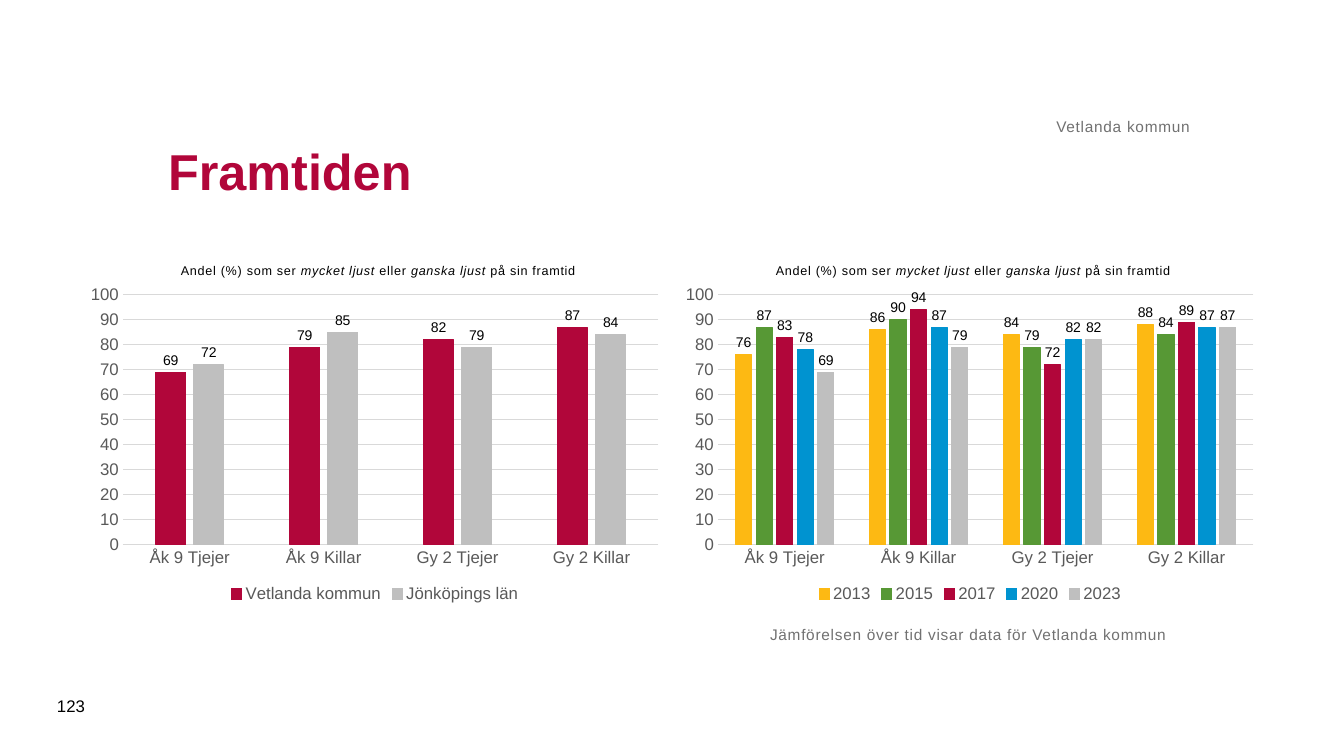
from lxml import etree
from pptx import Presentation
from pptx.chart.data import CategoryChartData
from pptx.dml.color import RGBColor
from pptx.enum.chart import XL_CHART_TYPE as ChartType
from pptx.enum.chart import XL_LABEL_POSITION as LabelPosition
from pptx.enum.chart import XL_LEGEND_POSITION as LegendPosition
from pptx.enum.chart import XL_TICK_MARK as TickMark
from pptx.enum.text import MSO_ANCHOR as Anchor
from pptx.enum.text import PP_ALIGN as Align
from pptx.oxml.ns import qn
from pptx.util import Emu, Pt

FONT = "Arial"
FORMAT = "#,##0;#,##0"
RED = RGBColor(0xB1, 0x06, 0x3A)
SILVER = RGBColor(0xBF, 0xBF, 0xBF)
YELLOW = RGBColor(0xFD, 0xB9, 0x13)
GREEN = RGBColor(0x57, 0x98, 0x35)
BLUE = RGBColor(0x00, 0x93, 0xD0)
BLACK = RGBColor(0, 0, 0)
GREY = RGBColor(0x71, 0x71, 0x71)
AXIS_GREY = RGBColor(0x59, 0x59, 0x59)
GRID_GREY = RGBColor(0xD9, 0xD9, 0xD9)

# Content
TITLE = "Framtiden"
CHART_TITLE = [  # text, italic
    ("Andel (%) som ser ", False),
    ("mycket ljust", True),
    (" eller ", False),
    ("ganska ljust", True),
    (" på sin framtid", False),
]
GROUPS = ["Åk 9 Tjejer", "Åk 9 Killar", "Gy 2 Tjejer", "Gy 2 Killar"]
COUNTY_SERIES = [
    ("Vetlanda kommun", (69, 79, 82, 87), RED),
    ("Jönköpings län", (72, 85, 79, 84), SILVER),
]
YEAR_SERIES = [
    ("2013", (76, 86, 84, 88), YELLOW),
    ("2015", (87, 90, 79, 84), GREEN),
    ("2017", (83, 94, 72, 89), RED),
    ("2020", (78, 87, 82, 87), BLUE),
    ("2023", (69, 79, 82, 87), SILVER),
]
CHARTS = [(79, COUNTY_SERIES), (674, YEAR_SERIES)]  # left edge, series
CHART_TOP, CHART_WIDTH, CHART_HEIGHT = 242, 592, 365
PLOT_BOX = (44, 53, 536, 250)  # inside the chart
CHART_TITLE_AT = (99, 17)
TEXTS = [  # text, box, size, colour, spacing, alignment, anchor, inset
    ("Jämförelsen över tid visar data för Vetlanda kommun",
     (770, 625, 535, 95), 11, GREY, 50, Align.LEFT, Anchor.TOP, 0),
    ("Vetlanda kommun",
     (158, 63, 1032, 73), 11, GREY, 50, Align.RIGHT, Anchor.BOTTOM, 0),
    ("123", (47, 686, 57, 40), 12, BLACK, 0, Align.LEFT, Anchor.MIDDLE, 10),
]


def px(length):
    return Emu(round(length * 914400 / 100.8))


def style_font(font, size, color, bold=False):
    font.name, font.size, font.bold = FONT, Pt(size), bold
    font.color.rgb = color


def add_span(para, text, size, color, bold=False, spacing=0):
    span = para.add_run()
    span.text = text
    style_font(span.font, size, color, bold)
    if spacing:
        span._r.get_or_add_rPr().set("spc", str(spacing))
    return span


def place_part(part, index, settings):
    """Give a chart part a manual layout, as shares of the chart size."""
    layout = part.find(qn("c:layout"))
    if layout is None:
        layout = etree.Element(qn("c:layout"))
        part.insert(index, layout)
    manual = etree.SubElement(layout, qn("c:manualLayout"))
    for tag, value in settings:
        etree.SubElement(manual, qn("c:" + tag)).set("val", str(value))


def shares(lengths):
    sizes = (CHART_WIDTH, CHART_HEIGHT) * 2
    return [(tag, round(length / size, 3))
            for tag, length, size in zip("xywh", lengths, sizes)]


def add_columns(page, left, series_list):
    data = CategoryChartData(number_format=FORMAT)
    data.categories = GROUPS
    for name, values, _ in series_list:
        data.add_series(name, values)
    chart = page.shapes.add_chart(
        ChartType.COLUMN_CLUSTERED, px(left), px(CHART_TOP),
        px(CHART_WIDTH), px(CHART_HEIGHT), data).chart
    style_font(chart.font, 10, BLACK)

    # Chart title
    chart.has_title = True
    para = chart.chart_title.text_frame.paragraphs[0]
    for text, italic in CHART_TITLE:
        add_span(para, text, 9, BLACK, spacing=50).font.italic = italic
    modes = [("xMode", "edge"), ("yMode", "edge")]
    place_part(chart.chart_title._element, 1, modes + shares(CHART_TITLE_AT))
    plot_area = chart._chartSpace.find(".//" + qn("c:plotArea"))
    place_part(plot_area, 0,
               [("layoutTarget", "inner")] + modes + shares(PLOT_BOX))

    # Axes
    for axis in (chart.category_axis, chart.value_axis):
        axis.major_tick_mark = axis.minor_tick_mark = TickMark.NONE
        style_font(axis.tick_labels.font, 12, AXIS_GREY)
    value_axis = chart.value_axis
    value_axis.minimum_scale, value_axis.maximum_scale = 0, 100
    value_axis.major_unit = 10
    value_axis.tick_labels.number_format = FORMAT
    value_axis.tick_labels.number_format_is_linked = False
    value_axis.format.line.fill.background()
    for line in (chart.category_axis.format.line,
                 value_axis.major_gridlines.format.line):
        line.color.rgb, line.width = GRID_GREY, Pt(0.75)

    # Legend
    chart.has_legend = True
    chart.legend.position = LegendPosition.BOTTOM
    chart.legend.include_in_layout = False
    style_font(chart.legend.font, 12, AXIS_GREY)

    # Columns and their labels
    plot = chart.plots[0]
    plot.gap_width, plot.overlap = 219, -27
    plot.vary_by_categories = False
    for series, (_, _, color) in zip(plot.series, series_list):
        series.format.fill.solid()
        series.format.fill.fore_color.rgb = color
        series.format.line.color.rgb = color
        series.format.line.width = Pt(0.75)
        labels = series.data_labels
        labels.show_value = True
        labels.position = LabelPosition.OUTSIDE_END
        labels.number_format = FORMAT
        labels.number_format_is_linked = False
        style_font(labels.font, 10, BLACK)


def main():
    deck = Presentation()
    deck.slide_width, deck.slide_height = px(1344), px(756)
    page = deck.slides.add_slide(deck.slide_layouts[5])

    # Title
    title = page.shapes.title
    title.left, title.top, title.width, title.height = map(
        px, (158, 99, 1032, 143))
    title.text_frame.vertical_anchor = Anchor.MIDDLE
    para = title.text_frame.paragraphs[0]
    para.alignment = Align.LEFT
    add_span(para, TITLE, 36, RED, bold=True)

    # Charts
    for left, series_list in CHARTS:
        add_columns(page, left, series_list)

    # Notes, municipality and page number
    for text, box, size, color, spacing, align, anchor, inset in TEXTS:
        frame = page.shapes.add_textbox(*map(px, box)).text_frame
        frame.word_wrap = True
        frame.vertical_anchor = anchor
        frame.margin_left = frame.margin_right = px(inset)
        frame.margin_top = frame.margin_bottom = px(inset / 2)
        para = frame.paragraphs[0]
        para.alignment = align
        add_span(para, text, size, color, spacing=spacing)

    deck.save("out.pptx")


if __name__ == "__main__":
    main()
